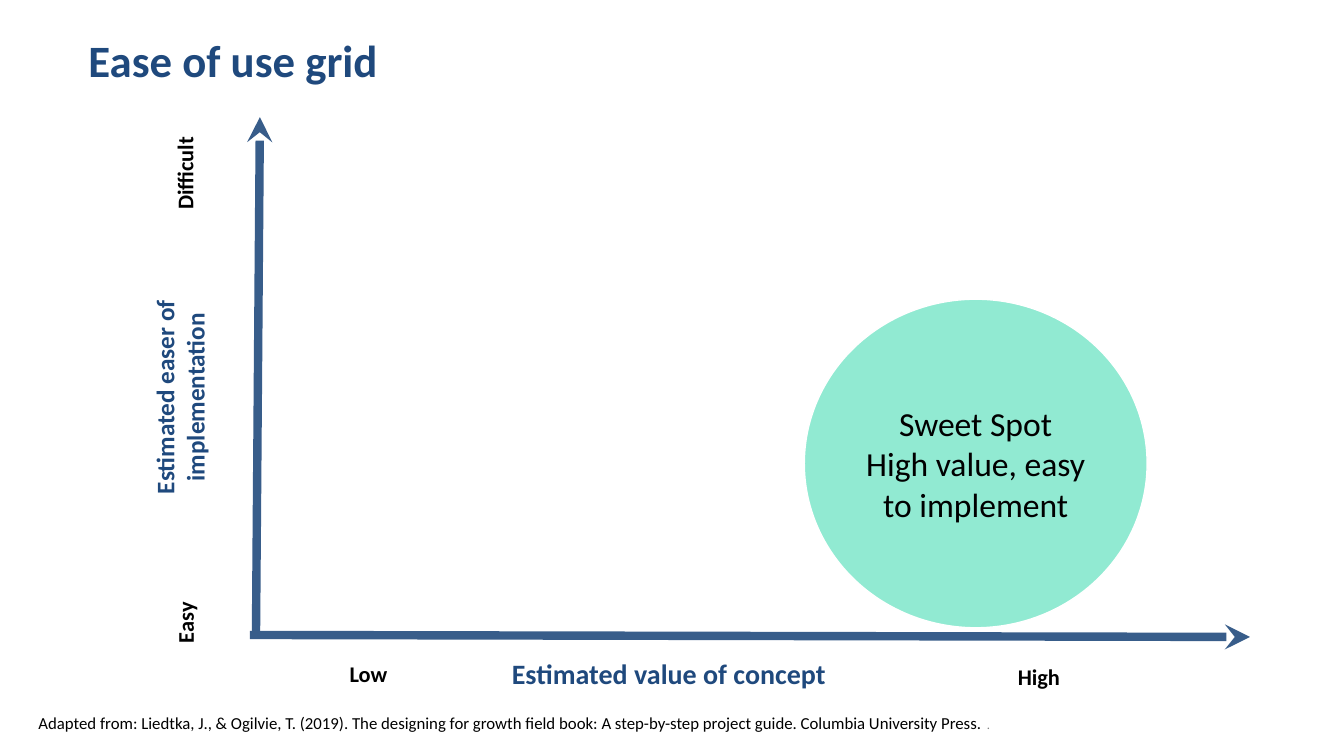
from dataclasses import dataclass

from lxml import etree
from pptx import Presentation
from pptx.dml.color import RGBColor
from pptx.enum.shapes import MSO_CONNECTOR, MSO_SHAPE
from pptx.enum.text import MSO_ANCHOR, PP_ALIGN
from pptx.oxml.ns import qn
from pptx.util import Cm, Pt

LEFT, CENTER = PP_ALIGN.LEFT, PP_ALIGN.CENTER
TOP, MIDDLE = MSO_ANCHOR.TOP, MSO_ANCHOR.MIDDLE
OVAL, STRAIGHT = MSO_SHAPE.OVAL, MSO_CONNECTOR.STRAIGHT


@dataclass(frozen=True)
class Theme:
    font: str = "Calibri"
    ink: str = "000000"
    navy: str = "1F497D"
    axis: str = "385D8A"
    mint: str = "91EAD2"
    white: str = "FFFFFF"
    gray: str = "7F7F7F"
    title: int = 32
    spot: int = 24
    across: int = 20
    up: int = 18
    mark: int = 16
    note: int = 12
    dot: int = 9


class Grid:
    def __init__(self, slide, theme):
        self.shapes = slide.shapes
        self.theme = theme

    def style(self, run, size, color, bold=False):
        font = run.font
        font.name = self.theme.font
        font.size = Pt(size)
        font.bold = bold
        font.color.rgb = RGBColor.from_string(color)

    def put(self, frame, text, size, color, bold, align, anchor):
        """Set and style the text of a frame."""
        frame.word_wrap = True
        frame.vertical_anchor = anchor
        frame.text = text
        for para in frame.paragraphs:
            para.alignment = align
            for run in para.runs:
                self.style(run, size, color, bold)

    def label(self, text, area, size, color, bold=True, turn=0,
              align=LEFT, anchor=TOP):
        """Add a text box; area is left, top, width, height in cm."""
        box = self.shapes.add_textbox(*map(Cm, area))
        box.rotation = turn
        self.put(box.text_frame, text, size, color, bold, align, anchor)
        return box.text_frame

    def circle(self, text, area):
        theme = self.theme
        oval = self.shapes.add_shape(OVAL, *map(Cm, area))
        oval.shadow.inherit = False
        oval.fill.solid()
        oval.fill.fore_color.rgb = RGBColor.from_string(theme.mint)
        oval.line.color.rgb = RGBColor.from_string(theme.white)
        oval.line.width = Pt(1)
        self.put(oval.text_frame, text, theme.spot, theme.ink, False,
                 CENTER, MIDDLE)

    def arrow(self, *ends):
        """Add an axis; ends are x and y of its start, then its tip, in cm."""
        axis = self.shapes.add_connector(STRAIGHT, *map(Cm, ends))
        axis.line.color.rgb = RGBColor.from_string(self.theme.axis)
        axis.line.width = Pt(6)
        props = axis.element.spPr
        etree.SubElement(props.find(qn("a:ln")), qn("a:tailEnd"),
                         type="stealth")
        etree.SubElement(props, qn("a:effectLst"))


def main():
    deck = Presentation()
    deck.slide_width, deck.slide_height = Cm(33.87), Cm(19.05)
    theme = Theme()
    grid = Grid(deck.slides.add_slide(deck.slide_layouts[6]), theme)

    title = grid.label("Ease of use grid", (1.98, 0, 30.48, 3.18),
                       theme.title, theme.navy, anchor=MIDDLE)
    title.paragraphs[0].line_spacing = 0.9

    grid.label("Estimated value of concept", (12.65, 16.43, 11.3, 2.13),
               theme.across, theme.navy)
    grid.label("Estimated easer of implementation", (0.79, 8.74, 8.23, 2.54),
               theme.up, theme.navy, turn=270, align=CENTER)
    grid.circle("Sweet Spot\nHigh value, easy to implement",
                (20.27, 7.54, 8.64, 8.28))

    marks = [
        ("Low", (8.56, 16.51, 2.82, 0.94), 0),
        ("High", (25.4, 16.59, 3.2, 0.94), 0),
        ("Easy", (3.33, 14.27, 3.05, 1.32), 270),
        ("Difficult", (3.12, 3.15, 3.45, 1.32), 270),
    ]
    for text, area, turn in marks:
        grid.label(text, area, theme.mark, theme.ink, turn=turn)

    grid.arrow(6.3, 16, 31.5, 16.05)
    grid.arrow(6.45, 16.1, 6.55, 2.95)

    note = grid.label(
        "Adapted from: Liedtka, J., & Ogilvie, T. (2019). The designing for "
        "growth field book: A step-by-step project guide. Columbia "
        "University Press. ",
        (0.97, 17.83, 32.5, 0.76), theme.note, theme.ink, bold=False)
    note.margin_left = 0
    dot = note.paragraphs[0].add_run()
    dot.text = "."
    grid.style(dot, theme.dot, theme.gray)

    deck.save("out.pptx")


if __name__ == "__main__":
    main()
